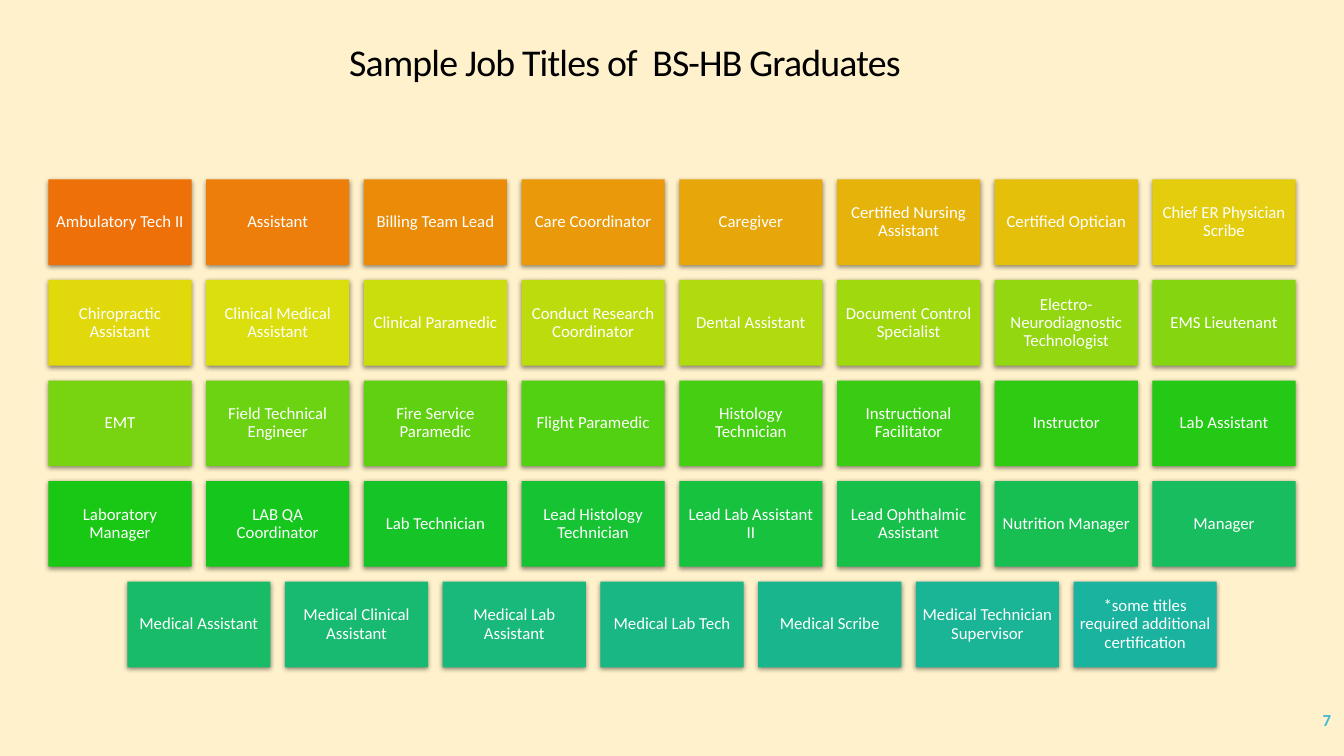
from colorsys import hls_to_rgb, rgb_to_hls

from lxml import etree
from pptx import Presentation
from pptx.dml.color import RGBColor
from pptx.enum.shapes import MSO_SHAPE
from pptx.enum.text import MSO_ANCHOR, PP_ALIGN
from pptx.oxml import parse_xml
from pptx.util import Inches, Pt

RECTANGLE = MSO_SHAPE.RECTANGLE
MIDDLE = MSO_ANCHOR.MIDDLE
CENTER, RIGHT = PP_ALIGN.CENTER, PP_ALIGN.RIGHT

CREAM = RGBColor(0xFF, 0xF1, 0xCB)
BLACK = RGBColor(0x00, 0x00, 0x00)
WHITE = RGBColor(0xFF, 0xFF, 0xFF)
SKY = RGBColor(0x40, 0xBA, 0xD2)
FIRST_TILE = RGBColor(0xEE, 0x70, 0x08)
LAST_TILE = RGBColor(0x1A, 0xB3, 0x9F)

SLIDE_WIDTH = 13.33
TILE_WIDTH, TILE_HEIGHT = 1.42, 0.85
COLUMN_STEP = (11.43 - 0.48) / 7
FIRST_TOP = 1.78
ROW_STEP = (5.77 - FIRST_TOP) / 4

JOB_ROWS = [
    ["Ambulatory Tech II", "Assistant", "Billing Team Lead", "Care Coordinator",
     "Caregiver", "Certified Nursing Assistant", "Certified Optician",
     "Chief ER Physician Scribe"],
    ["Chiropractic Assistant", "Clinical Medical Assistant", "Clinical Paramedic",
     "Conduct Research Coordinator", "Dental Assistant",
     "Document Control Specialist", "Electro-Neurodiagnostic Technologist",
     "EMS Lieutenant"],
    ["EMT", "Field Technical Engineer", "Fire Service Paramedic",
     "Flight Paramedic", "Histology Technician", "Instructional Facilitator",
     "Instructor", "Lab Assistant"],
    ["Laboratory Manager", "LAB QA Coordinator", "Lab Technician",
     "Lead Histology Technician", "Lead Lab Assistant II",
     "Lead Ophthalmic Assistant", "Nutrition Manager", "Manager"],
    ["Medical Assistant", "Medical Clinical Assistant", "Medical Lab Assistant",
     "Medical Lab Tech", "Medical Scribe", "Medical Technician Supervisor",
     "*some titles required additional certification"],
]

SHADOW = """<a:effectLst xmlns:a="http://schemas.openxmlformats.org/drawingml/2006/main">
  <a:outerShdw blurRad="44450" dist="13970" dir="5400000" algn="ctr" rotWithShape="0">
    <a:srgbClr val="000000"><a:alpha val="45000"/></a:srgbClr>
  </a:outerShdw>
</a:effectLst>"""


def write(shape, text, size, color, alignment):
    """Put one line of formatted text into a shape and return its run."""
    text_frame = shape.text_frame
    text_frame.text = text
    text_frame.word_wrap = True
    text_frame.vertical_anchor = MIDDLE
    paragraph = text_frame.paragraphs[0]
    paragraph.alignment = alignment
    paragraph.line_spacing = 0.9
    run = paragraph.runs[0]
    run.font.name = "Calibri"
    run.font.size = Pt(size)
    run.font.color.rgb = color
    return run


def tile_color(fraction):
    """Blend from the first to the last tile colour through the hues."""
    first, last = (rgb_to_hls(*(channel / 255 for channel in color))
                   for color in (FIRST_TILE, LAST_TILE))
    blend = [a + (b - a) * fraction for a, b in zip(first, last)]
    return RGBColor(*(round(channel * 255) for channel in hls_to_rgb(*blend)))


presentation = Presentation()
presentation.slide_width = Inches(SLIDE_WIDTH)
presentation.slide_height = Inches(7.5)
slide = presentation.slides.add_slide(presentation.slide_layouts[6])
slide.background.fill.solid()
slide.background.fill.fore_color.rgb = CREAM

# Slide number
number_box = slide.shapes.add_textbox(Inches(11.63), Inches(6.95), Inches(1.67), Inches(0.4))
write(number_box, "7", 12, SKY, RIGHT).font.bold = True

# Title
title_box = slide.shapes.add_textbox(Inches(0), Inches(0.4), Inches(12.39), Inches(0.47))
title_run = write(title_box, "Sample Job Titles of  BS-HB Graduates", 27, BLACK, CENTER)
title_run.font._element.set("spc", "-60")

# Job tiles, each row centred on the slide
tile_count = sum(len(row) for row in JOB_ROWS)
tile_index = 0
for row_index, row in enumerate(JOB_ROWS):
    row_width = (len(row) - 1) * COLUMN_STEP + TILE_WIDTH
    row_left = (SLIDE_WIDTH - row_width) / 2
    top = FIRST_TOP + row_index * ROW_STEP
    for column, job in enumerate(row):
        tile = slide.shapes.add_shape(
            RECTANGLE, Inches(row_left + column * COLUMN_STEP), Inches(top),
            Inches(TILE_WIDTH), Inches(TILE_HEIGHT))
        tile.fill.solid()
        tile.fill.fore_color.rgb = tile_color(tile_index / (tile_count - 1))
        tile.line.fill.background()
        tile._element.spPr.append(parse_xml(SHADOW))
        text_frame = tile.text_frame
        text_frame.margin_left = text_frame.margin_right = Inches(0.05)
        text_frame.margin_top = text_frame.margin_bottom = Inches(0.05)
        write(tile, job, 12, WHITE, CENTER)
        tile_index += 1

presentation.save("out.pptx")
